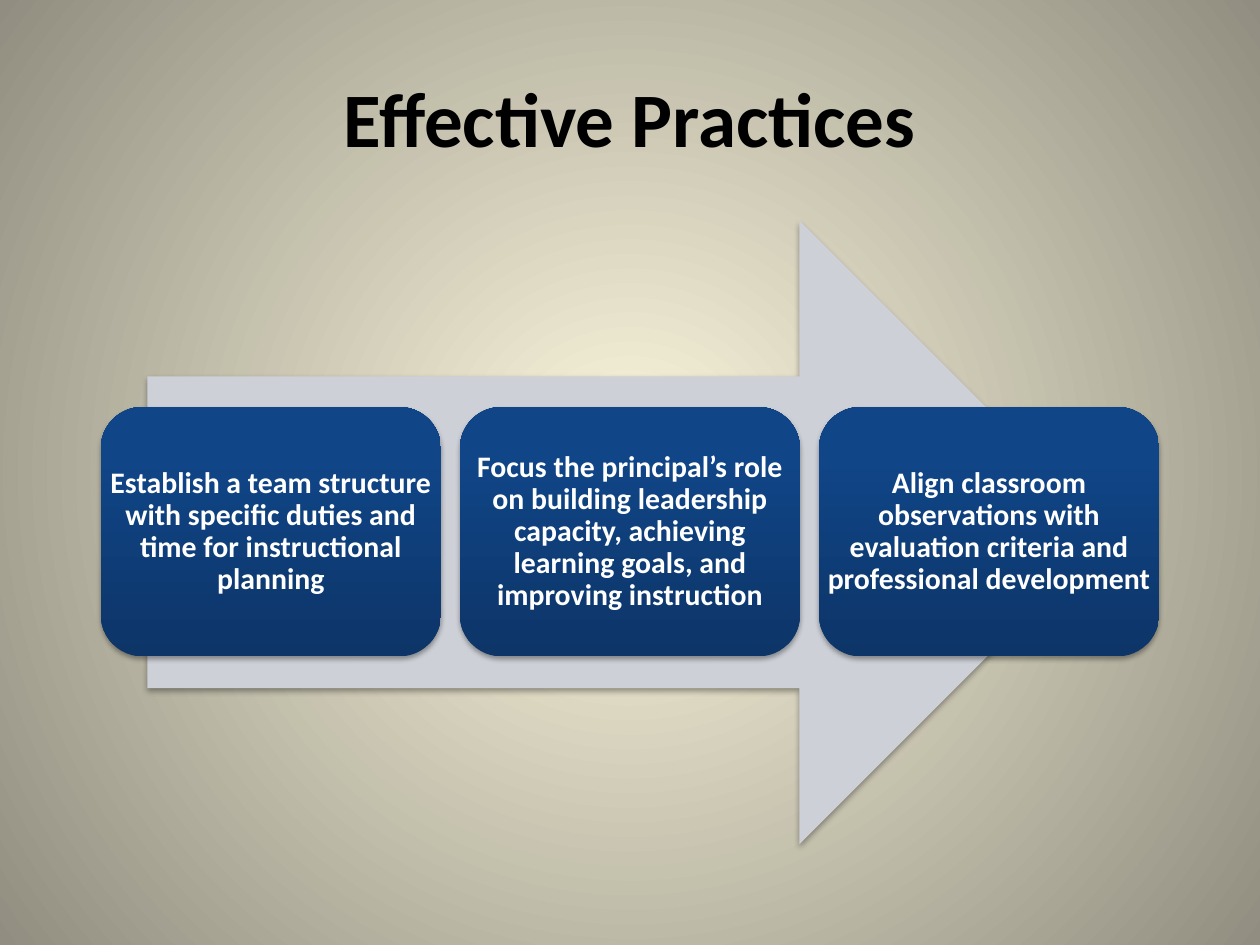
import pptx
import pptx.util
import pptx.dml.color
import pptx.enum.shapes
import pptx.enum.text
import pptx.oxml
import pptx.oxml.ns

RGBColor = pptx.dml.color.RGBColor
Inches = pptx.util.Inches
Pt = pptx.util.Pt
MSO_SHAPE = pptx.enum.shapes.MSO_SHAPE
qn = pptx.oxml.ns.qn

BLACK = RGBColor(0x00, 0x00, 0x00)
WHITE = RGBColor(0xFF, 0xFF, 0xFF)
ARROW_GREY = RGBColor(0xCD, 0xD0, 0xD7)
CREAM = RGBColor(0xFC, 0xF7, 0xDD)
STONE = RGBColor(0x91, 0x8E, 0x81)
NAVY = RGBColor(0x0D, 0x35, 0x68)
BLUE = RGBColor(0x10, 0x45, 0x87)
BRIGHT_BLUE = RGBColor(0x0E, 0x45, 0x8A)

FONT = "Calibri"
CENTERED_CIRCLE = ('<a:path path="circle"><a:fillToRect l="50000" t="50000" '
                   'r="50000" b="50000"/></a:path>')
UPWARD = '<a:lin ang="16200000" scaled="0"/>'

# Grid of equal cards, in inches
CARD_LEFT, CARD_TOP = 0.8, 3.23
CARD_WIDTH, CARD_HEIGHT = 2.7, 1.98
CARD_GAP = 0.15
PRACTICES = [
    "Establish a team structure with specific duties and time for "
    "instructional planning",
    "Focus the principal’s role on building leadership capacity, achieving "
    "learning goals, and improving instruction",
    "Align classroom observations with evaluation criteria and professional "
    "development",
]


def set_gradient(fill, element, stops, direction):
    """Fill with (percent, color) stops running in the given direction."""
    fill.gradient()
    old_gradient = next(element.iter(qn("a:gradFill")))
    stop_xml = "".join(
        f'<a:gs pos="{percent * 1000}"><a:srgbClr val="{color}"/></a:gs>'
        for percent, color in stops)
    gradient = pptx.oxml.parse_xml(
        f'<a:gradFill {pptx.oxml.ns.nsdecls("a")} rotWithShape="1">'
        f'<a:gsLst>{stop_xml}</a:gsLst>{direction}</a:gradFill>')
    old_gradient.getparent().replace(old_gradient, gradient)


def add_shadowed_shape(shapes, kind, left, top, width, height):
    """Add a shape without outline and with a soft shadow below it."""
    shape = shapes.add_shape(kind, Inches(left), Inches(top),
                             Inches(width), Inches(height))
    shape.line.fill.background()
    shape.shadow.inherit = False
    effects = shape._element.spPr.find(qn("a:effectLst"))
    effects.append(pptx.oxml.parse_xml(
        f'<a:outerShdw {pptx.oxml.ns.nsdecls("a")} blurRad="{Pt(3.1)}" '
        f'dist="{Pt(1.8)}" dir="5400000" rotWithShape="0">'
        f'<a:srgbClr val="{BLACK}"><a:alpha val="35000"/></a:srgbClr>'
        '</a:outerShdw>'))
    return shape


def add_text(shapes, text, left, top, width, height, size, color, inset):
    """Add a bold, centred line of text and return its paragraph."""
    text_box = shapes.add_textbox(Inches(left), Inches(top),
                                  Inches(width), Inches(height))
    frame = text_box.text_frame
    frame.word_wrap = True
    frame.vertical_anchor = pptx.enum.text.MSO_ANCHOR.MIDDLE
    frame.margin_left = frame.margin_right = Inches(inset)
    frame.margin_top = frame.margin_bottom = Inches(inset)
    paragraph = frame.paragraphs[0]
    paragraph.alignment = pptx.enum.text.PP_ALIGN.CENTER
    run = paragraph.add_run()
    run.text = text
    run.font.name = FONT
    run.font.size = Pt(size)
    run.font.bold = True
    run.font.color.rgb = color
    return paragraph


def add_card(shapes, column, text):
    """Add one blue card with its practice in the given column."""
    left = CARD_LEFT + column * (CARD_WIDTH + CARD_GAP)
    box = (left, CARD_TOP, CARD_WIDTH, CARD_HEIGHT)
    card = add_shadowed_shape(shapes, MSO_SHAPE.ROUNDED_RECTANGLE, *box)
    set_gradient(card.fill, card._element,
                 [(0, NAVY), (80, BLUE), (100, BRIGHT_BLUE)], UPWARD)
    paragraph = add_text(shapes, text, *box, size=17, color=WHITE, inset=0.07)
    paragraph.line_spacing = 0.9


def main():
    presentation = pptx.Presentation()
    presentation.slide_width = Inches(10)
    presentation.slide_height = Inches(7.5)
    slide = presentation.slides.add_slide(presentation.slide_layouts[6])

    # Background and title
    set_gradient(slide.background.fill, slide._element,
                 [(0, CREAM), (100, STONE)], CENTERED_CIRCLE)
    add_text(slide.shapes, "Effective Practices", 0.5, 0.3, 9, 1.25,
             size=44, color=BLACK, inset=0.05)

    # Arrow with the practices in front of it
    process = slide.shapes.add_group_shape()
    arrow = add_shadowed_shape(process.shapes, MSO_SHAPE.RIGHT_ARROW,
                               1.17, 1.75, 7.65, 4.95)
    arrow.fill.solid()
    arrow.fill.fore_color.rgb = ARROW_GREY
    for column, text in enumerate(PRACTICES):
        add_card(process.shapes, column, text)

    presentation.save("out.pptx")


if __name__ == "__main__":
    main()
